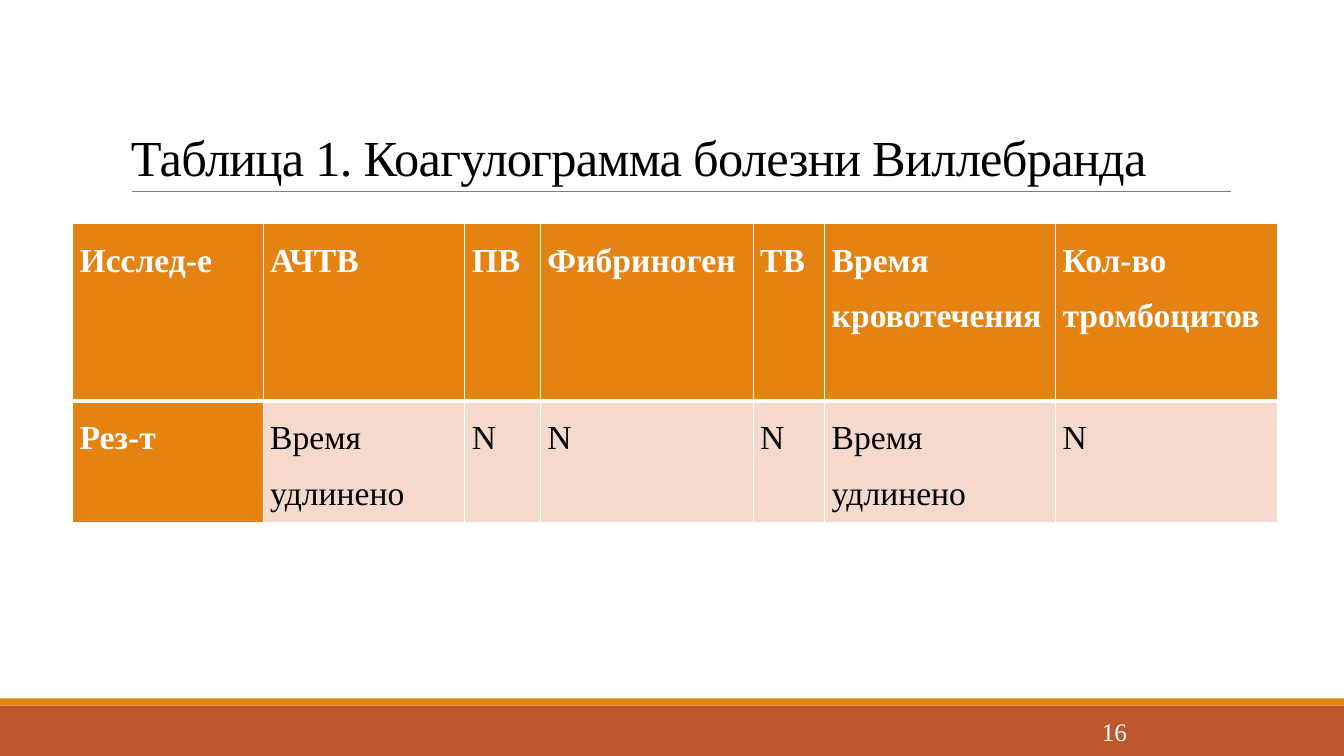
from lxml import etree
from pptx import Presentation
from pptx import util as u
from pptx.dml import color
from pptx.enum import shapes, text
from pptx.oxml import ns

ORANGE, RUST, PINK = "E48312", "BD582C", "F5D9CC"
WHITE, BLACK, GREY = "FFFFFF", "000000", "808080"


def rgb(value):
    return color.RGBColor.from_string(value)


def assign(target, values):
    for name, value in values.items():
        setattr(target, name, value)


class Deck:
    """Draws styled elements on the current slide."""

    font = "Times New Roman"

    def __init__(self, prs):
        self.s = prs.slides.add_slide(prs.slide_layouts[6])

    def add_words(self, p, words, size, ink, bold=False, **layout):
        assign(p, layout)
        r = p.add_run()
        r.text = words
        assign(r.font, {"name": self.font, "size": u.Pt(size), "bold": bold})
        r.font.color.rgb = rgb(ink)
        return r

    def bar(self, top, height, fill):
        sp = self.s.shapes.add_shape(shapes.MSO_SHAPE.RECTANGLE, 0, u.Inches(top),
                                     u.Inches(13.33), u.Inches(height))
        sp.shadow.inherit = False
        sp.fill.solid()
        sp.fill.fore_color.rgb = rgb(fill)
        sp.line.fill.background()

    def rule(self, left, right, y):
        sp = self.s.shapes.add_connector(shapes.MSO_CONNECTOR.STRAIGHT, u.Inches(left),
                                         u.Inches(y), u.Inches(right), u.Inches(y))
        sp.line.color.rgb = rgb(GREY)
        sp.line.width = u.Pt(0.5)
        etree.SubElement(sp._element.spPr, ns.qn("a:effectLst"))

    def label(self, box, words, size, ink, anchor, line_spacing=1.0):
        tf = self.s.shapes.add_textbox(*map(u.Inches, box)).text_frame
        assign(tf, {"word_wrap": True, "vertical_anchor": anchor})
        return self.add_words(tf.paragraphs[0], words, size, ink,
                              alignment=text.PP_ALIGN.JUSTIFY, line_spacing=line_spacing)

    def borders(self, cell, widths):
        tc_pr = cell._tc.get_or_add_tcPr()
        for side, width in widths.items():
            ln = etree.SubElement(tc_pr, ns.qn(f"a:ln{side}"), w=str(u.Pt(width)))
            fill = etree.SubElement(ln, ns.qn("a:solidFill"))
            etree.SubElement(fill, ns.qn("a:srgbClr"), val=WHITE)

    def table(self, left, top, widths, heights, rows):
        box = (left, top, sum(widths), sum(heights))
        table = self.s.shapes.add_table(len(rows), len(widths), *map(u.Inches, box)).table
        for column, width in zip(table.columns, widths):
            column.width = u.Inches(width)
        for row, height in zip(table.rows, heights):
            row.height = u.Inches(height)
        for i, row in enumerate(rows):
            for j, words in enumerate(row):
                cell = table.cell(i, j)
                head = i == 0 or j == 0
                assign(cell, {"margin_left": u.Inches(0.07), "margin_right": u.Inches(0.07),
                              "margin_top": 0, "margin_bottom": 0})
                self.borders(cell, {"L": 1, "R": 1, "T": 3 if i == 1 else 1,
                                    "B": 3 if i == 0 else 1})
                cell.fill.solid()
                cell.fill.fore_color.rgb = rgb(ORANGE if head else PINK)
                self.add_words(cell.text_frame.paragraphs[0], words, 24,
                               WHITE if head else BLACK, head, line_spacing=1.5)


def main():
    prs = Presentation()
    assign(prs, {"slide_width": u.Inches(13.33), "slide_height": u.Inches(7.5)})
    deck = Deck(prs)
    deck.bar(7, 0.5, RUST)
    deck.bar(6.93, 0.07, ORANGE)
    deck.rule(1.31, 12.21, 1.9)
    r = deck.label((1.2, 0.91, 11, 0.99), "Таблица 1. Коагулограмма болезни Виллебранда",
                   36, BLACK, text.MSO_ANCHOR.BOTTOM, 0.85)
    r._r.get_or_add_rPr().set("spc", "-50")
    deck.table(0.72, 2.22, [1.89, 2, 0.75, 2.11, 0.71, 2.29, 2.2], [1.76, 1.15], [
        ["Исслед-е", "АЧТВ", "ПВ", "Фибриноген", "ТВ", "Время кровотечения",
         "Кол-во тромбоцитов"],
        ["Рез-т", "Время удлинено", "N", "N", "N", "Время удлинено", "N"],
    ])
    deck.label((10.83, 7.06, 1.43, 0.4), "16", 18, WHITE, text.MSO_ANCHOR.MIDDLE)
    prs.save("out.pptx")


if __name__ == "__main__":
    main()
